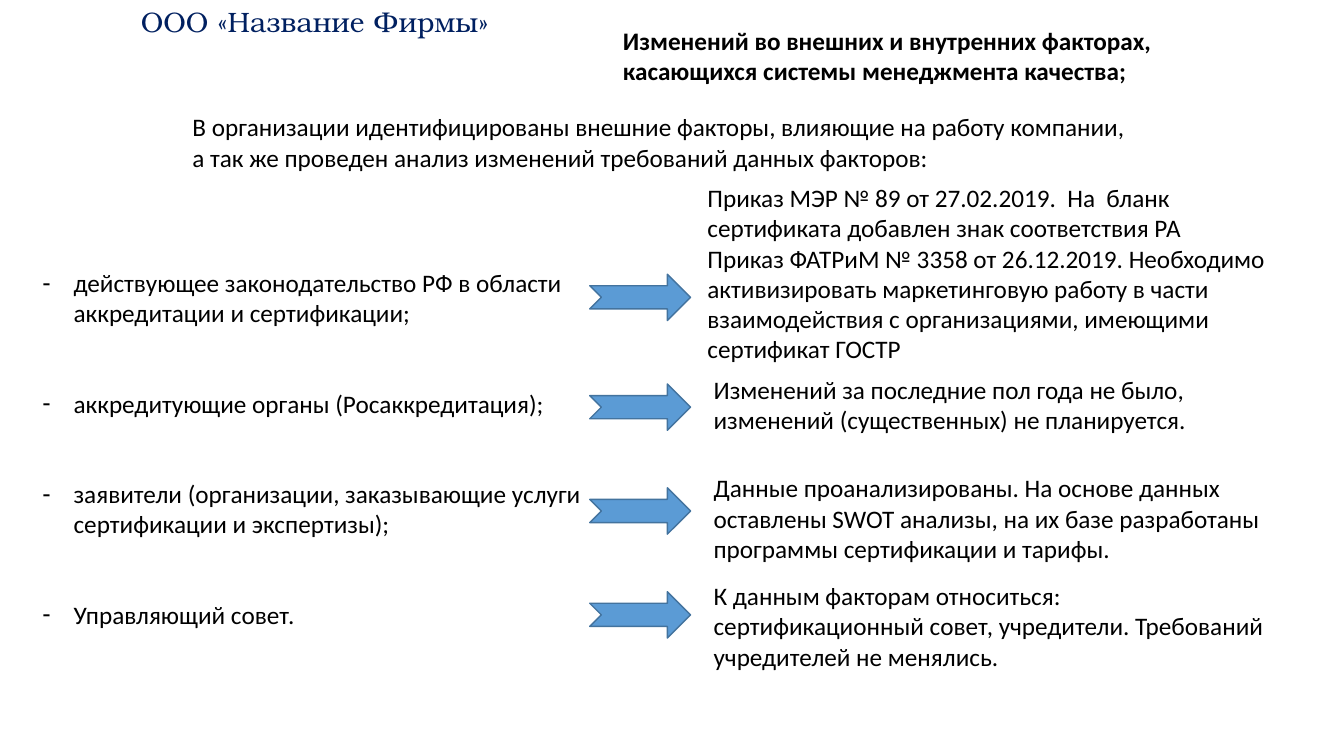
from dataclasses import dataclass

from lxml import etree
from pptx import Presentation
from pptx.dml.color import RGBColor
from pptx.enum.shapes import MSO_SHAPE
from pptx.enum.text import MSO_ANCHOR, MSO_AUTO_SIZE, PP_ALIGN
from pptx.oxml.ns import qn
from pptx.util import Inches, Pt

ARROW = MSO_SHAPE.NOTCHED_RIGHT_ARROW
TOP, LEFT, FIXED = MSO_ANCHOR.TOP, PP_ALIGN.LEFT, MSO_AUTO_SIZE.NONE


@dataclass(frozen=True)
class Theme:
    text: RGBColor = RGBColor(0x00, 0x00, 0x00)
    company: RGBColor = RGBColor(0x00, 0x20, 0x60)
    arrow_fill: RGBColor = RGBColor(0x5B, 0x9B, 0xD5)
    arrow_line: RGBColor = RGBColor(0x43, 0x73, 0x9E)
    font: str = "Calibri"
    company_font: str = "TeX Gyre Bonum"
    size: Pt = Pt(18)
    company_size: Pt = Pt(20)
    factor_gap: Pt = Pt(43)


theme = Theme()
deck = Presentation()
deck.slide_width, deck.slide_height = Inches(13.33), Inches(7.5)
page = deck.slides.add_slide(deck.slide_layouts[1])


def area(left, top, width, height):
    """Turn percentages of the slide's size into lengths."""
    across, down = deck.slide_width / 100, deck.slide_height / 100
    return (round(left * across), round(top * down),
            round(width * across), round(height * down))


def write(box, place, lines, font=theme.font, size=theme.size,
          color=theme.text, bold=False):
    """Place a box and fill it with one left-aligned paragraph per line."""
    box.left, box.top, box.width, box.height = area(*place)
    frame = box.text_frame
    frame.text = "\n".join(lines)
    frame.word_wrap, frame.auto_size = True, FIXED
    frame.vertical_anchor = TOP
    for para in frame.paragraphs:
        para.alignment = LEFT
        para.space_before = Pt(0)
        para.font.name, para.font.size = font, size
        para.font.color.rgb, para.font.bold = color, bold


company = page.shapes.add_textbox(0, 0, 0, 0)
write(company, (9.75, 0, 32, 5.87), ["ООО «Название Фирмы»"],
      theme.company_font, theme.company_size, theme.company)

write(page.shapes.title, (45.6, 2.67, 50, 9.47),
      ["Изменений во внешних и внутренних факторах, "
       "касающихся системы менеджмента качества;"], bold=True)

factors = page.placeholders[1]
write(factors, (2.4, 34.67, 50, 49.87), [
    "действующее законодательство РФ в области аккредитации и сертификации;",
    "аккредитующие органы (Росаккредитация);",
    "заявители (организации, заказывающие услуги сертификации и экспертизы);",
    "Управляющий совет.",
])
for row, para in enumerate(factors.text_frame.paragraphs):
    if row:
        para.space_before = theme.factor_gap
    properties = para._p.get_or_add_pPr()
    properties.set("marL", str(Inches(0.31)))
    properties.set("indent", str(-Inches(0.31)))
    bullet = etree.Element(qn("a:buChar"), char="-")
    properties.find(qn("a:defRPr")).addprevious(bullet)

texts = [
    ((13.58, 14.13, 72.1, 9.47), [
        "В организации идентифицированы внешние факторы, влияющие на работу компании,",
        "а так же проведен анализ изменений требований данных факторов:"]),
    ((51.9, 23.47, 46.28, 25.6), [
        "Приказ МЭР № 89 от 27.02.2019.  На  бланк сертификата "
        "добавлен знак соответствия РА",
        "Приказ ФАТРиМ № 3358 от 26.12.2019. Необходимо активизировать "
        "маркетинговую работу в части взаимодействия с организациями, "
        "имеющими сертификат ГОСТР"]),
    ((52.36, 48.8, 45.4, 9.47), [
        "Изменений за последние пол года не было,",
        "изменений (существенных) не планируется."]),
    ((52.36, 61.87, 46.95, 13.47), [
        "Данные проанализированы. На основе данных оставлены SWOT анализы, "
        "на их базе разработаны программы сертификации и тарифы."]),
    ((52.36, 76.13, 46.95, 13.47), [
        "К данным факторам относиться:",
        "сертификационный совет, учредители. Требований учредителей не менялись."]),
]
for place, lines in texts:
    write(page.shapes.add_textbox(0, 0, 0, 0), place, lines)

for top in (36.27, 50.8, 64.53, 78.27):
    arrow = page.shapes.add_shape(ARROW, *area(43.88, top, 7.5, 6.13))
    arrow.shadow.inherit = False
    arrow.fill.solid()
    arrow.fill.fore_color.rgb = theme.arrow_fill
    arrow.line.color.rgb = theme.arrow_line
    arrow.line.width = Pt(1)

deck.save("out.pptx")
